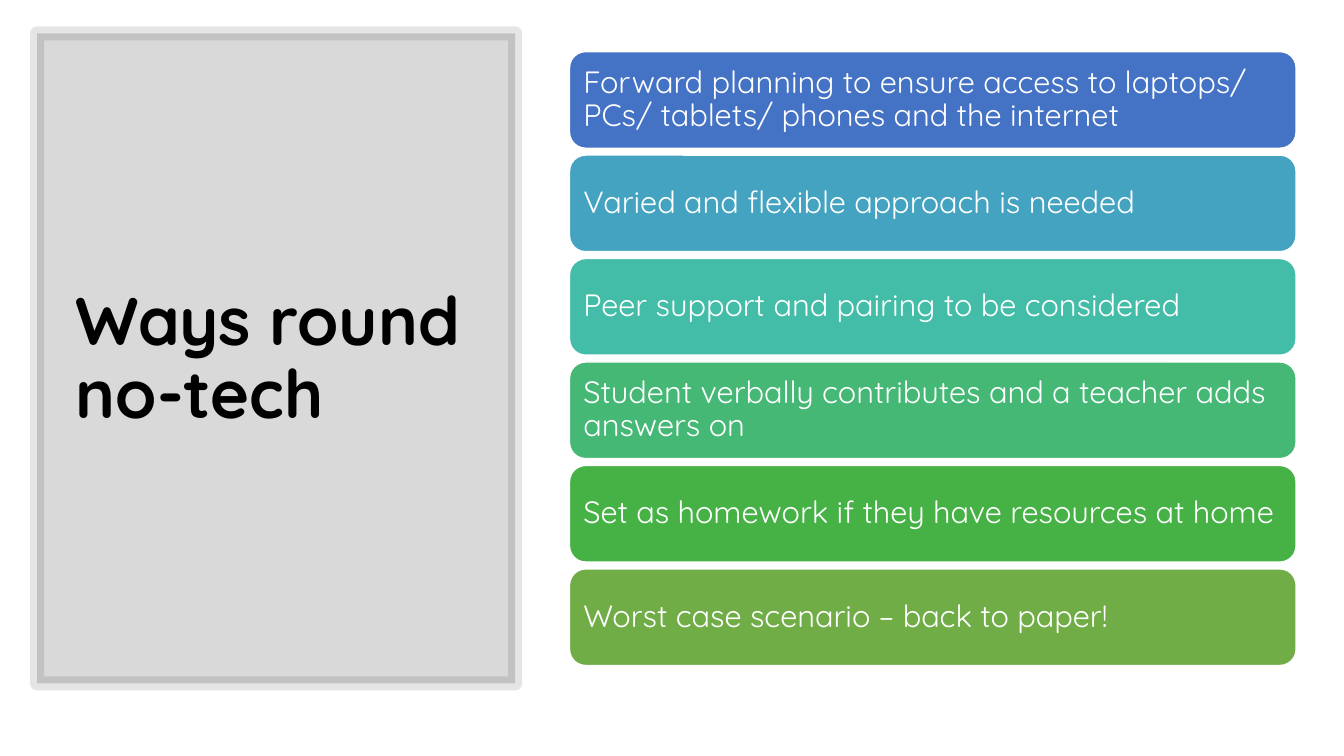
from dataclasses import dataclass

from lxml.etree import SubElement
from pptx import Presentation
from pptx.dml.color import RGBColor
from pptx.enum.shapes import MSO_SHAPE as Preset
from pptx.enum.text import MSO_ANCHOR as Anchor, MSO_AUTO_SIZE as AutoSize, PP_ALIGN as Align
from pptx.oxml.ns import qn
from pptx.util import Pt


@dataclass(frozen=True)
class Theme:
    font: str = "Quicksand"
    ink: str = "000000"
    paper: str = "FFFFFF"
    title_size: int = 48
    tip_size: int = 22
    line_spacing: float = 0.9
    panel_opacity: int = 15
    frame_opacity: int = 10


@dataclass(frozen=True)
class Box:
    left: float
    top: float
    width: float
    height: float

    def lengths(self):
        return Pt(self.left), Pt(self.top), Pt(self.width), Pt(self.height)


THEME = Theme()
TITLE = "Ways round no-tech"
TIPS = [
    ("Forward planning to ensure access to laptops/ PCs/ tablets/ phones and the internet", "4472C4"),
    ("Varied and flexible approach is needed", "44A3C0"),
    ("Peer support and pairing to be considered", "43BDA7"),
    ("Student verbally contributes and a teacher adds answers on", "44B874"),
    ("Set as homework if they have resources at home", "46B246"),
    ("Worst case scenario – back to paper!", "70AD47"),
]


def add_block(slide, preset, box, fill, line, line_width):
    block = slide.shapes.add_shape(preset, *box.lengths())
    block.shadow.inherit = False
    block.fill.solid()
    block.fill.fore_color.rgb = RGBColor.from_string(fill)
    block.line.color.rgb = RGBColor.from_string(line)
    block.line.width = Pt(line_width)
    return block


def set_opacity(solid_fill, percent):
    color = solid_fill.find(qn("a:srgbClr"))
    SubElement(color, qn("a:alpha")).set("val", str(percent * 1000))


def write(frame, text, size, color, bold=False):
    frame.word_wrap = True
    frame.auto_size = AutoSize.NONE
    frame.vertical_anchor = Anchor.MIDDLE
    frame.text = text
    paragraph = frame.paragraphs[0]
    paragraph.alignment = Align.LEFT
    paragraph.line_spacing = THEME.line_spacing
    paragraph.font.name = THEME.font
    paragraph.font.size = Pt(size)
    paragraph.font.bold = bold
    paragraph.font.color.rgb = RGBColor.from_string(color)


def title_panel(slide, box):
    panel = add_block(slide, Preset.RECTANGLE, box, THEME.ink, THEME.ink, 10)
    properties = panel.element.spPr
    set_opacity(properties.find(qn("a:solidFill")), THEME.panel_opacity)
    set_opacity(properties.find(qn("a:ln")).find(qn("a:solidFill")), THEME.frame_opacity)

    title = slide.shapes.title
    panel.element.addnext(title.element)
    title.left, title.top, title.width, title.height = Box(
        box.left + 20.5, box.top + 26.5, box.width - 42, box.height - 50.5
    ).lengths()
    write(title.text_frame, TITLE, THEME.title_size, THEME.ink, bold=True)


def tip_list(slide, box, gap=4.9, inset=6.5):
    height = (box.height - gap * (len(TIPS) - 1)) / len(TIPS)
    for row, (tip, color) in enumerate(TIPS):
        bar_box = Box(box.left, box.top + row * (height + gap), box.width, height)
        bar = add_block(slide, Preset.ROUNDED_RECTANGLE, bar_box, color, THEME.paper, 1)
        frame = bar.text_frame
        frame.margin_left = frame.margin_right = Pt(inset)
        frame.margin_top = frame.margin_bottom = Pt(inset)
        write(frame, tip, THEME.tip_size, THEME.paper)


def main():
    deck = Presentation()
    deck.slide_width, deck.slide_height = Pt(960), Pt(540)
    slide = deck.slides.add_slide(deck.slide_layouts[5])
    title_panel(slide, Box(26.5, 23.8, 341.5, 464.4))
    tip_list(slide, Box(406.8, 36.9, 519, 438.5))
    deck.save("out.pptx")


if __name__ == "__main__":
    main()
